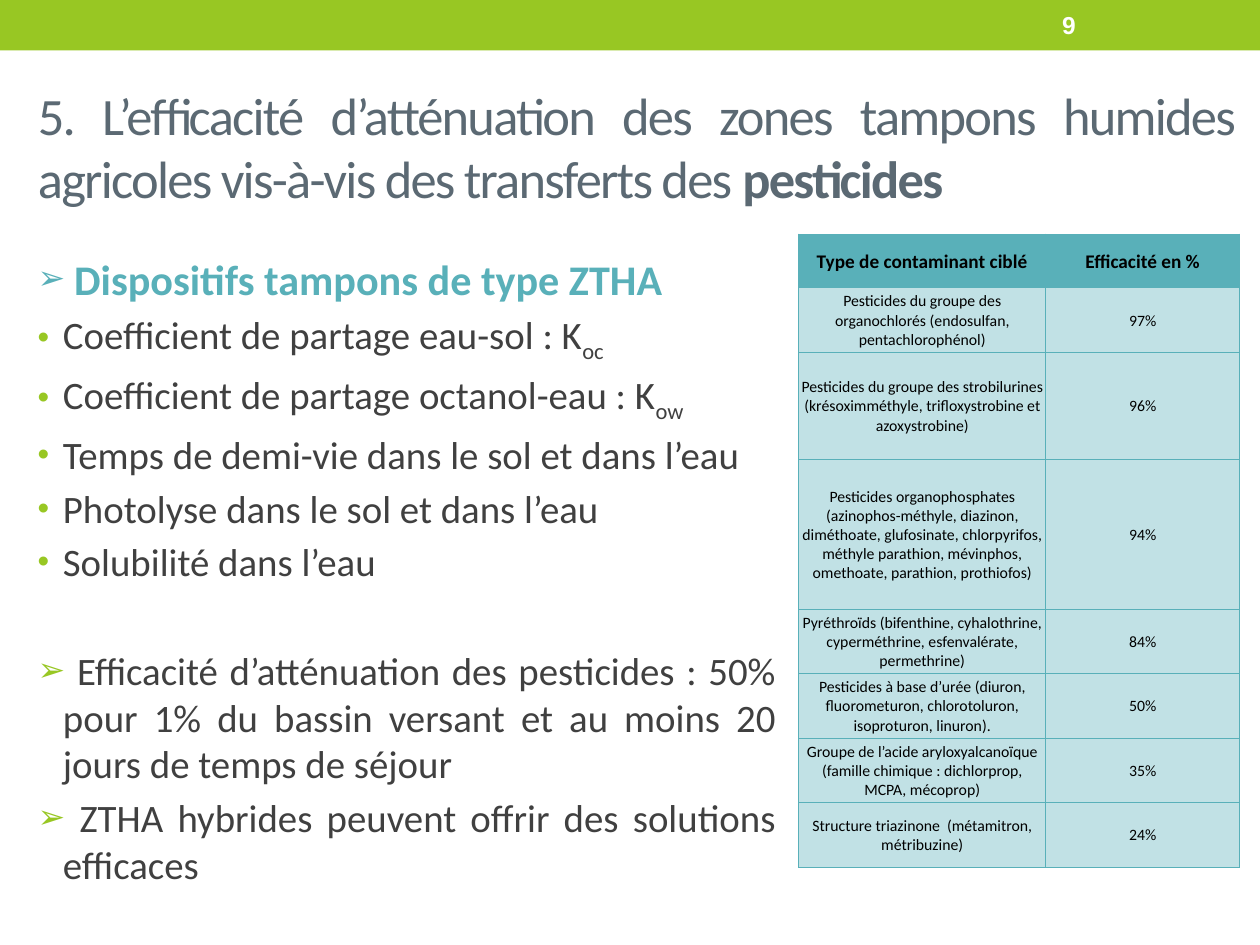
from lxml.etree import SubElement
from pptx import Presentation
from pptx.dml.color import RGBColor
from pptx.enum.shapes import MSO_SHAPE as Shape
from pptx.enum.text import MSO_ANCHOR as Anchor, PP_ALIGN as Align
from pptx.oxml import parse_xml
from pptx.oxml.ns import nsdecls, qn
from pptx.util import Cm, Pt

THEME = {
    "green": "98C723", "teal": "59B0B9", "pale": "C1E1E5", "slate": "5B6973",
    "dark": "404040", "black": "000000", "white": "FFFFFF",
    "text_font": "Calibri", "number_font": "Arial",
    "title": 30, "lead": 24.1, "body": 22.2, "number": 14, "head": 11, "cell": 9,
}

PAGE = "9"
TITLE = [("5. L’efficacité d’atténuation des zones tampons humides agricoles "
          "vis-à-vis des transferts des ", {}), ("pesticides", {"bold": True})]

ARROW, DOT = "➢", "•"
LEAD = {"color": "teal", "bold": True}
SUB = {"baseline": -25}
POINTS = [
    (ARROW, "teal", 4, [(" ", LEAD), ("Dispositifs tampons de type ZTHA", LEAD | {"size": "lead"})]),
    (DOT, "green", 4, [("Coefficient de partage eau-sol : K", {}), ("oc", SUB)]),
    (DOT, "green", 4, [("Coefficient de partage octanol-eau : K", {}), ("ow", SUB)]),
    (DOT, "green", 4, [("Temps de demi-vie dans le sol et dans l’eau", {})]),
    (DOT, "green", 4, [("Photolyse dans le sol et dans l’eau", {})]),
    (DOT, "green", 4, [("Solubilité dans l’eau", {})]),
    (ARROW, "green", 35.5, [(" Efficacité d’atténuation des pesticides : 50% pour 1% du bassin "
                             "versant et au moins 20 jours de temps de séjour", {})]),
    (ARROW, "green", 4, [(" ZTHA hybrides peuvent offrir des solutions efficaces", {})]),
]

COLUMN_WIDTHS = [4.98, 3.91]
EFFICACY = [
    (1.08, ["Type de contaminant ciblé"], "Efficacité en %"),
    (1.3, ["Pesticides du groupe des organochlorés (endosulfan, pentachlorophénol)"], "97%"),
    (2.16, ["Pesticides du groupe des strobilurines (krésoximméthyle, "
            "trifloxystrobine et azoxystrobine)"], "96%"),
    (3.02, ["Pesticides organophosphates (azinophos-méthyle, diazinon, diméthoate, "
            "glufosinate, chlorpyrifos,",
            "méthyle parathion, mévinphos, omethoate, parathion, prothiofos)"], "94%"),
    (1.3, ["Pyréthroïds (bifenthine, cyhalothrine, cyperméthrine, esfenvalérate, "
           "permethrine)"], "84%"),
    (1.3, ["Pesticides à base d’urée (diuron, fluorometuron, chlorotoluron, "
           "isoproturon, linuron)."], "50%"),
    (1.3, ["Groupe de l’acide aryloxyalcanoïque",
           "(famille chimique : dichlorprop, MCPA, mécoprop)"], "35%"),
    (1.3, ["Structure triazinone  (métamitron, métribuzine)"], "24%"),
]


def rgb(name):
    return RGBColor.from_string(THEME[name])


def write(paragraph, text, *, size="body", color="dark", font="text_font", bold=False,
          align=Align.LEFT, baseline=None, spacing=None):
    paragraph.alignment = align
    run = paragraph.add_run()
    run.text = text
    run.font.size = Pt(THEME[size])
    run.font.name = THEME[font]
    run.font.bold = bold
    run.font.color.rgb = rgb(color)
    props = run._r.get_or_add_rPr()
    if baseline is not None:
        props.set("baseline", str(baseline * 1000))
    if spacing is not None:
        props.set("spc", str(spacing * 100))


def add_bullet(paragraph, mark, color):
    props = paragraph._p.get_or_add_pPr()
    props.set("marL", str(Cm(0.51)))
    props.set("indent", str(-Cm(0.51)))
    tint = SubElement(props, qn("a:buClr"))
    SubElement(tint, qn("a:srgbClr"), val=THEME[color])
    SubElement(props, qn("a:buSzPct"), val="85000")
    SubElement(props, qn("a:buFont"), typeface="Arial")
    SubElement(props, qn("a:buChar"), char=mark)


def add_borders(cell, color):
    props = cell._tc.get_or_add_tcPr()
    for index, side in enumerate(("lnL", "lnR", "lnT", "lnB")):
        props.insert(index, parse_xml(
            f'<a:{side} {nsdecls("a")} w="{Pt(0.75)}"><a:solidFill>'
            f'<a:srgbClr val="{THEME[color]}"/></a:solidFill></a:{side}>'))


def add_band(slide, width):
    band = slide.shapes.add_shape(Shape.RECTANGLE, 0, 0, width, Cm(1.02))
    band.shadow.inherit = False
    band.fill.solid()
    band.fill.fore_color.rgb = rgb("green")
    band.line.fill.background()
    page = slide.shapes.add_textbox(Cm(21.16), Cm(0.05), Cm(2.97), Cm(0.91)).text_frame
    page.word_wrap = True
    page.vertical_anchor = Anchor.MIDDLE
    write(page.paragraphs[0], PAGE, size="number", color="white", font="number_font", bold=True)


def add_title(slide):
    title = slide.shapes.title
    title.left, title.top, title.width, title.height = Cm(0.51), Cm(1.57), Cm(24.64), Cm(2.74)
    title.text_frame.vertical_anchor = Anchor.MIDDLE
    for text, style in TITLE:
        write(title.text_frame.paragraphs[0], text, size="title", color="slate",
              align=Align.JUSTIFY, spacing=-1, **style)


def add_points(slide):
    frame = slide.shapes.add_textbox(Cm(0.51), Cm(4.98), Cm(15.39), Cm(13.54)).text_frame
    frame.word_wrap = True
    for index, (mark, color, gap, runs) in enumerate(POINTS):
        point = frame.add_paragraph() if index else frame.paragraphs[0]
        point.space_before = Pt(gap)
        add_bullet(point, mark, color)
        for text, style in runs:
            write(point, text, align=Align.JUSTIFY, **style)


def add_efficacy_table(slide):
    heights = [height for height, *_ in EFFICACY]
    table = slide.shapes.add_table(len(EFFICACY), len(COLUMN_WIDTHS), Cm(16.1), Cm(4.72),
                                   Cm(sum(COLUMN_WIDTHS)), Cm(sum(heights))).table
    for column, width in zip(table.columns, COLUMN_WIDTHS):
        column.width = Cm(width)
    for row, (height, contaminant, rate) in enumerate(EFFICACY):
        table.rows[row].height = Cm(height)
        header = row == 0
        for cell, lines in zip(table.rows[row].cells, (contaminant, [rate])):
            cell.margin_left = cell.margin_right = cell.margin_top = Cm(0.03)
            cell.margin_bottom = 0
            cell.vertical_anchor = Anchor.MIDDLE
            cell.fill.solid()
            cell.fill.fore_color.rgb = rgb("teal" if header else "pale")
            add_borders(cell, "teal")
            for index, line in enumerate(lines):
                frame = cell.text_frame
                write(frame.add_paragraph() if index else frame.paragraphs[0], line,
                      size="head" if header else "cell", color="black", bold=header,
                      align=Align.CENTER)


def main():
    deck = Presentation()
    deck.slide_width, deck.slide_height = Cm(25.4), Cm(19.05)
    slide = deck.slides.add_slide(deck.slide_layouts[5])
    add_band(slide, deck.slide_width)
    add_title(slide)
    add_points(slide)
    add_efficacy_table(slide)
    deck.save("out.pptx")


if __name__ == "__main__":
    main()
